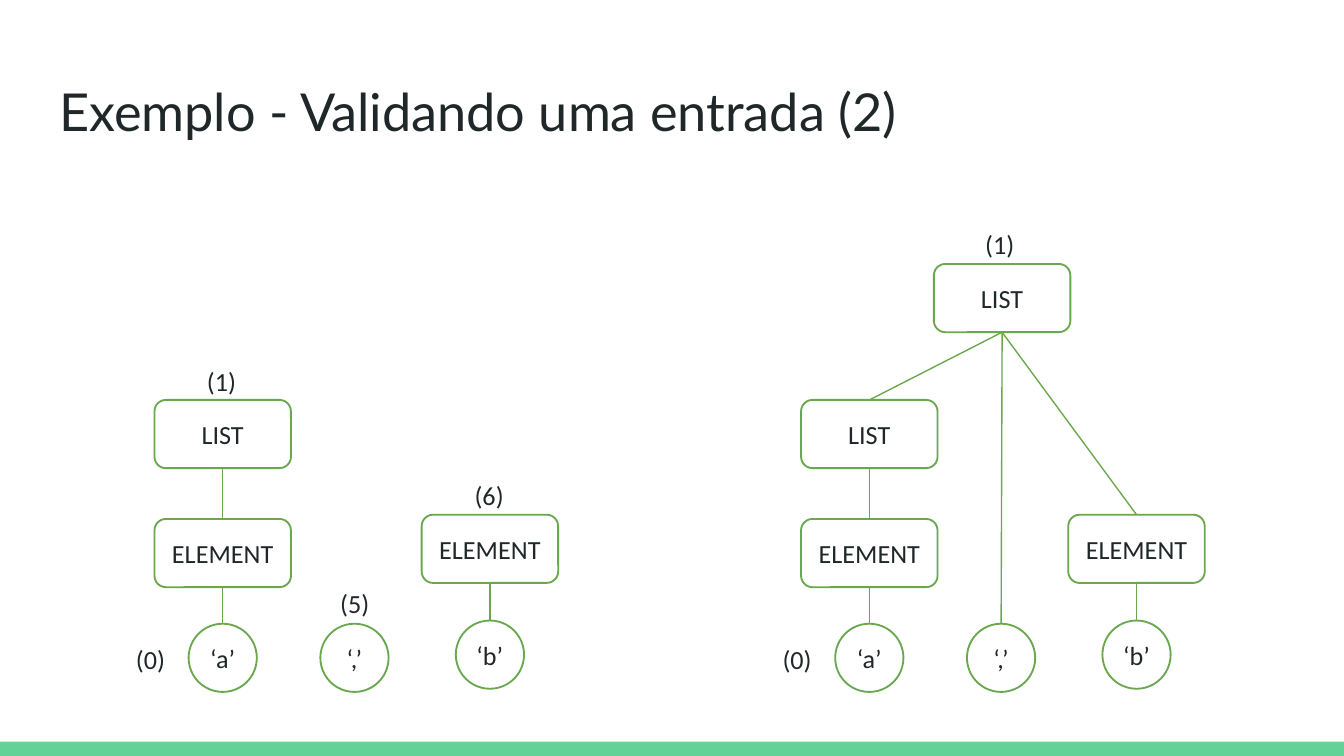
from dataclasses import dataclass

import lxml.etree
import pptx
import pptx.dml.color
import pptx.enum.shapes
import pptx.enum.text
import pptx.oxml.ns
import pptx.shapes.autoshape
import pptx.slide
import pptx.text.text
import pptx.util

Cm = pptx.util.Cm
Pt = pptx.util.Pt
Kind = pptx.enum.shapes.MSO_SHAPE
Align = pptx.enum.text.PP_ALIGN
Anchor = pptx.enum.text.MSO_ANCHOR
RGB = pptx.dml.color.RGBColor
Shape = pptx.shapes.autoshape.Shape
Slide = pptx.slide.Slide


@dataclass(frozen=True)
class Theme:
    ink: RGB = RGB.from_string("202729")
    branch: RGB = RGB.from_string("6AA84F")
    paper: RGB = RGB.from_string("FFFFFF")
    footer: RGB = RGB.from_string("63D297")
    title_font: str = "Lato"
    node_font: str = "Calibri"
    title_size: float = 28
    node_size: float = 14
    outline: float = 1
    edge: float = 0.75


@dataclass(frozen=True)
class Node:
    key: str
    text: str
    center: float
    top: float
    leaf: bool = False


@dataclass(frozen=True)
class State:
    text: str
    left: float
    top: float
    width: float


THEME = Theme()
NODE_WIDTH = 2.58
NODE_HEIGHT = 1.29
STATE_HEIGHT = 0.76
LEFT_TREE = 4.21
RIGHT_TREE = 16.43

FOREST = (
    Node("a", "‘a’", 0, 11.79, leaf=True),
    Node("element a", "ELEMENT", 0, 9.81),
    Node("list", "LIST", 0, 7.56),
    Node("comma", "‘,’", 2.49, 11.79, leaf=True),
    Node("b", "‘b’", 5.05, 11.73, leaf=True),
    Node("element b", "ELEMENT", 5.05, 9.73),
)
ROOT = Node("root", "LIST", 2.51, 4.99)
FOREST_EDGES = (("a", "element a"), ("element a", "list"), ("b", "element b"))
ROOT_EDGES = (("list", "root"), ("comma", "root"), ("element b", "root"))
STATES = (
    State("(1)", 3.73, 6.81, 1.3),
    State("(5)", 6.25, 11.02, 1.07),
    State("(6)", 8.79, 8.97, 1.07),
    State("(0)", 2.39, 12.07, 1.3),
    State("(0)", 14.61, 12.07, 1.07),
    State("(1)", 18.44, 4.22, 1.3),
)


def write(
    frame: pptx.text.text.TextFrame,
    text: str,
    *,
    font: str = THEME.node_font,
    size: float = THEME.node_size,
    align: Align = Align.LEFT,
    anchor: Anchor = Anchor.TOP,
    inset_x: float = 0.18,
    inset_y: float = 0.09,
) -> None:
    frame.word_wrap = True
    frame.vertical_anchor = anchor
    frame.margin_left = frame.margin_right = Cm(inset_x)
    frame.margin_top = frame.margin_bottom = Cm(inset_y)
    paragraph = frame.paragraphs[0]
    paragraph.alignment = align
    run = paragraph.add_run()
    run.text = text
    run.font.name = font
    run.font.size = Pt(size)
    run.font.color.rgb = THEME.ink


def draw_node(slide: Slide, node: Node, origin: float) -> Shape:
    width = NODE_HEIGHT if node.leaf else NODE_WIDTH
    symbol = slide.shapes.add_shape(
        Kind.OVAL if node.leaf else Kind.ROUNDED_RECTANGLE,
        Cm(origin + node.center - width / 2),
        Cm(node.top),
        Cm(width),
        Cm(NODE_HEIGHT),
    )
    symbol.shadow.inherit = False
    symbol.fill.solid()
    symbol.fill.fore_color.rgb = THEME.paper
    symbol.line.color.rgb = THEME.branch
    symbol.line.width = Pt(THEME.outline)
    write(symbol.text_frame, node.text, align=Align.CENTER, anchor=Anchor.MIDDLE)
    return symbol


def draw_edge(slide: Slide, child: Shape, parent: Shape) -> None:
    edge = slide.shapes.add_connector(
        pptx.enum.shapes.MSO_CONNECTOR.STRAIGHT, 0, 0, 0, 0
    )
    edge.begin_connect(child, 0)
    edge.end_connect(parent, 2)
    edge.line.color.rgb = THEME.branch
    edge.line.width = Pt(THEME.edge)
    properties = edge._element.spPr
    lxml.etree.SubElement(properties, pptx.oxml.ns.qn("a:effectLst"))


def draw_tree(
    slide: Slide,
    origin: float,
    nodes: tuple[Node, ...],
    edges: tuple[tuple[str, str], ...],
) -> None:
    symbols = {node.key: draw_node(slide, node, origin) for node in nodes}
    for child, parent in edges:
        draw_edge(slide, symbols[child], symbols[parent])


def draw_state(slide: Slide, state: State) -> None:
    label = slide.shapes.add_textbox(
        Cm(state.left), Cm(state.top), Cm(state.width), Cm(STATE_HEIGHT)
    )
    write(label.text_frame, state.text)


def draw_frame(slide: Slide) -> None:
    footer = slide.shapes.add_shape(
        Kind.RECTANGLE, 0, Cm(14.02), Cm(25.4), Cm(0.27)
    )
    footer.shadow.inherit = False
    footer.fill.solid()
    footer.fill.fore_color.rgb = THEME.footer
    footer.line.fill.background()
    title = slide.shapes.add_textbox(Cm(0.87), Cm(1.24), Cm(23.67), Cm(1.6))
    write(
        title.text_frame,
        "Exemplo - Validando uma entrada (2)",
        font=THEME.title_font,
        size=THEME.title_size,
        inset_x=0.25,
        inset_y=0.25,
    )


def main() -> None:
    deck = pptx.Presentation()
    deck.slide_width = Cm(25.4)
    deck.slide_height = Cm(14.29)
    slide = deck.slides.add_slide(deck.slide_layouts[6])
    draw_frame(slide)
    draw_tree(slide, LEFT_TREE, FOREST, FOREST_EDGES)
    draw_tree(slide, RIGHT_TREE, (*FOREST, ROOT), FOREST_EDGES + ROOT_EDGES)
    for state in STATES:
        draw_state(slide, state)
    deck.save("out.pptx")


if __name__ == "__main__":
    main()
